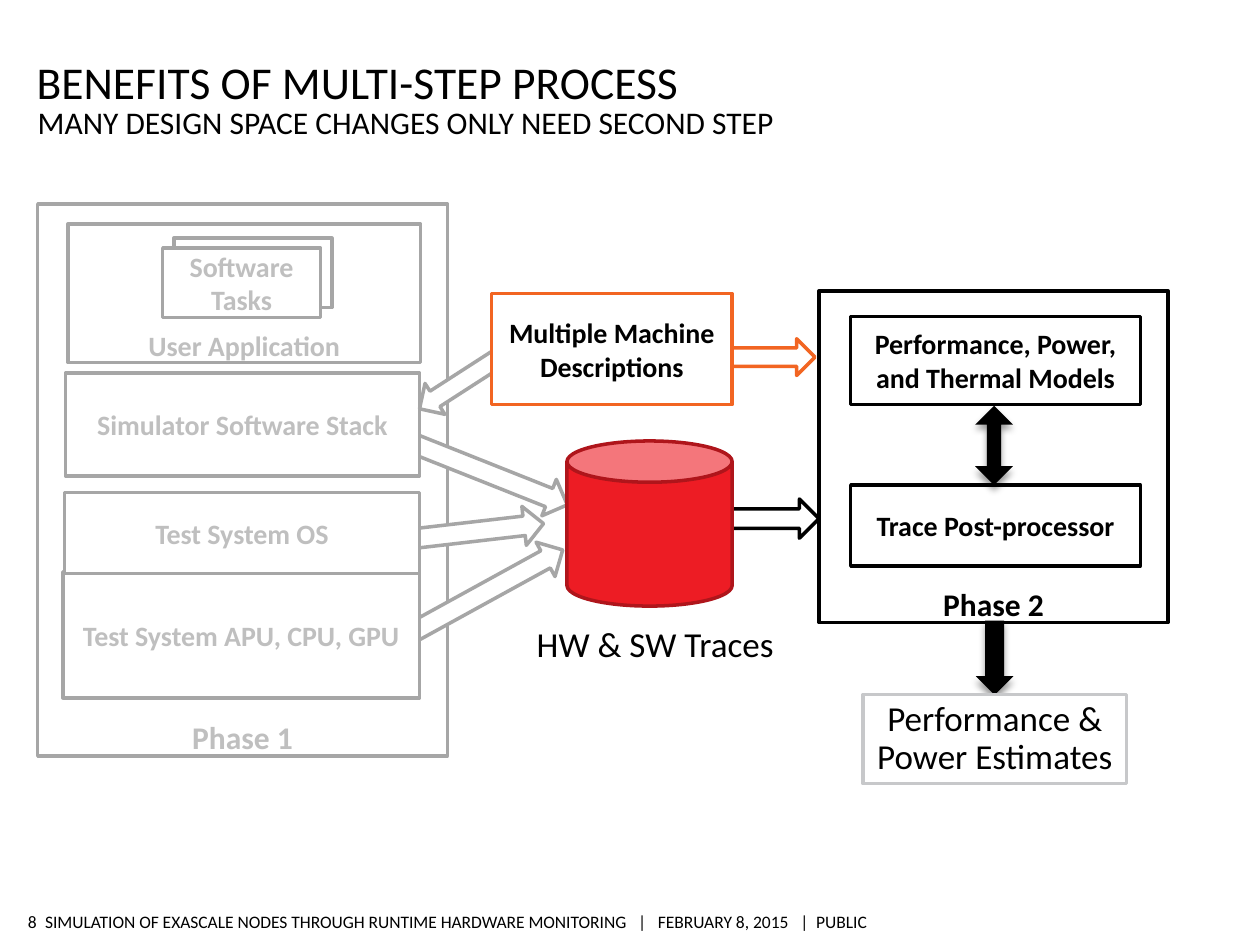
from lxml import etree
from pptx import Presentation
from pptx.dml.color import RGBColor
from pptx.enum.shapes import MSO_SHAPE as SHAPE
from pptx.enum.text import MSO_ANCHOR as ANCHOR, PP_ALIGN as ALIGN
from pptx.oxml.ns import qn
from pptx.util import Cm, Pt

FONT = "Calibri"
BLACK = RGBColor(0x00, 0x00, 0x00)
WHITE = RGBColor(0xFF, 0xFF, 0xFF)
GRAY_LINE = RGBColor(0xA6, 0xA6, 0xA6)
GRAY_TEXT = RGBColor(0xBF, 0xBF, 0xBF)
PALE_LINE = RGBColor(0xC7, 0xC8, 0xCA)
ORANGE = RGBColor(0xF2, 0x65, 0x22)
RED = RGBColor(0xED, 0x1C, 0x24)
DARK_RED = RGBColor(0xAF, 0x15, 0x1B)

SIDE, EDGE = 0.25, 0.13  # usual text insets in cm


def write(s, text, size, color=BLACK, bold=False, align=ALIGN.CENTER,
          anchor=ANCHOR.MIDDLE, insets=(SIDE, EDGE, SIDE, EDGE),
          wrap=True, spacing=None):
    tf = s.text_frame
    tf.word_wrap = wrap
    tf.vertical_anchor = anchor
    tf.margin_left, tf.margin_top, tf.margin_right, tf.margin_bottom = map(Cm, insets)
    p = tf.paragraphs[0]
    p.alignment = align
    if spacing:
        p.line_spacing = spacing
    r = p.add_run()
    r.text = text
    r.font.name = FONT
    r.font.size = Pt(size)
    r.font.bold = bold
    r.font.color.rgb = color


def add_label(slide, box, text, size, **style):
    sp = slide.shapes.add_textbox(*map(Cm, box))
    write(sp, text, size, **style)


def add_outlined(slide, kind, box, line, fill=WHITE, rotation=0):
    s = slide.shapes.add_shape(kind, *map(Cm, box))
    s.shadow.inherit = False
    s.rotation = rotation
    s.fill.solid()
    s.fill.fore_color.rgb = fill
    if line is None:
        s.line.fill.background()
    else:
        s.line.color.rgb = line
        s.line.width = Pt(2)
    return s


def add_box(slide, box, text, line=BLACK, color=BLACK):
    s = add_outlined(slide, SHAPE.RECTANGLE, box, line)
    write(s, text, 16, color, bold=True)


def add_container(slide, box, text, size, line, color, side):
    s = add_outlined(slide, SHAPE.RECTANGLE, box, line)
    write(s, text, size, color, bold=True, anchor=ANCHOR.BOTTOM,
          insets=(side, EDGE, side, 0))


def add_arrow(slide, box, line, rotation=0):
    add_outlined(slide, SHAPE.RIGHT_ARROW, box, line, rotation=rotation)


def add_solid_arrow(slide, kind, box, rotation=0, adjustments=()):
    s = add_outlined(slide, kind, box, None, BLACK, rotation)
    for i, value in enumerate(adjustments):
        s.adjustments[i] = value
    # Soft shadow falling straight down
    effects = s._element.spPr.find(qn("a:effectLst"))
    shadow = etree.SubElement(effects, qn("a:outerShdw"), blurRad=str(Pt(4)),
                              dist=str(Pt(3)), dir="5400000", rotWithShape="0")
    tint = etree.SubElement(shadow, qn("a:srgbClr"), val=str(BLACK))
    etree.SubElement(tint, qn("a:alpha"), val="40000")


def add_heading_and_footer(slide):
    add_label(slide, (0.74, 0.86, 21.34, 1.32), "BENEFITS OF MULTI-STEP PROCESS", 26,
              align=ALIGN.LEFT, anchor=ANCHOR.BOTTOM, insets=(0, EDGE, 0, 0))
    add_label(slide, (0.76, 2.08, 21.34, 0.79),
              "MANY DESIGN SPACE CHANGES ONLY NEED SECOND STEP", 18,
              align=ALIGN.LEFT, anchor=ANCHOR.TOP, insets=(0, 0, 0, 0))
    footer = dict(insets=(0, 0.1, 0, 0.1), wrap=False)
    add_label(slide, (0.91, 18.24, 17.25, 0.66),
              "SIMULATION OF EXASCALE NODES THROUGH RUNTIME HARDWARE MONITORING"
              "   |   FEBRUARY 8, 2015   |  PUBLIC", 10, align=ALIGN.LEFT, **footer)
    add_label(slide, (0.33, 18.24, 0.41, 0.66), "8", 10, align=ALIGN.RIGHT, **footer)


def add_phase_1(slide):
    gray = dict(line=GRAY_LINE, color=GRAY_TEXT)
    add_container(slide, (0.76, 4.11, 8.26, 11.13), "Phase 1", 18, side=0.64, **gray)
    add_container(slide, (1.37, 4.52, 7.11, 2.79), "User Application", 16,
                  side=SIDE, **gray)
    # Stacked software tasks
    add_outlined(slide, SHAPE.RECTANGLE, (3.51, 4.8, 3.18, 1.4), GRAY_LINE)
    add_box(slide, (3.28, 5, 3.18, 1.4), "Software Tasks", **gray)
    # Each layer covers the tail of its arrow to the traces
    layers = [
        ("Simulator Software Stack", (1.32, 7.52, 7.14, 2.08), (8.08, 9.14), 21.7),
        ("Test System APU, CPU, GPU", (1.27, 11.53, 7.19, 2.54), (8.08, 11.53), 331.2),
        ("Test System OS", (1.3, 9.93, 7.16, 1.63), (7.49, 10.36), 353.4),
    ]
    for text, box, corner, rotation in layers:
        add_arrow(slide, (*corner, 3.48, 0.79), GRAY_LINE, rotation)
        add_box(slide, box, text, **gray)
    # Machine descriptions feed the simulator
    add_arrow(slide, (8.31, 7.37, 1.85, 0.74), GRAY_LINE, 147.2)


def add_middle(slide):
    add_label(slide, (9.91, 12.52, 6.6, 1.02), "HW & SW Traces", 20, spacing=0.9)
    add_arrow(slide, (14, 10.06, 2.51, 0.79), BLACK)
    add_outlined(slide, SHAPE.CAN, (11.43, 8.89, 3.33, 3.33), DARK_RED, RED)
    add_arrow(slide, (14.58, 6.83, 1.85, 0.74), ORANGE)
    add_box(slide, (9.91, 5.92, 4.85, 2.24), "Multiple Machine Descriptions", ORANGE)


def add_phase_2(slide):
    add_container(slide, (16.51, 5.87, 7.04, 6.68), "Phase 2", 18, BLACK, BLACK, 0.64)
    add_box(slide, (17.15, 6.38, 5.84, 1.78), "Performance, Power, and Thermal Models")
    add_box(slide, (17.15, 9.78, 5.84, 1.63), "Trace Post-processor")


def add_results(slide):
    add_solid_arrow(slide, SHAPE.RIGHT_ARROW, (19.3, 12.88, 1.5, 0.76), 90)
    s = add_outlined(slide, SHAPE.RECTANGLE, (17.4, 14, 5.31, 1.8), PALE_LINE)
    write(s, "Performance & Power Estimates", 20, spacing=0.9)
    add_solid_arrow(slide, SHAPE.UP_DOWN_ARROW, (19.66, 8.18, 0.76, 1.6),
                    adjustments=(0.41, 0.38))


def main():
    prs = Presentation()
    prs.slide_width, prs.slide_height = Cm(25.4), Cm(19.05)
    slide = prs.slides.add_slide(prs.slide_layouts[6])
    add_heading_and_footer(slide)
    add_phase_2(slide)
    add_phase_1(slide)
    add_middle(slide)
    add_results(slide)
    prs.save("out.pptx")


if __name__ == "__main__":
    main()
